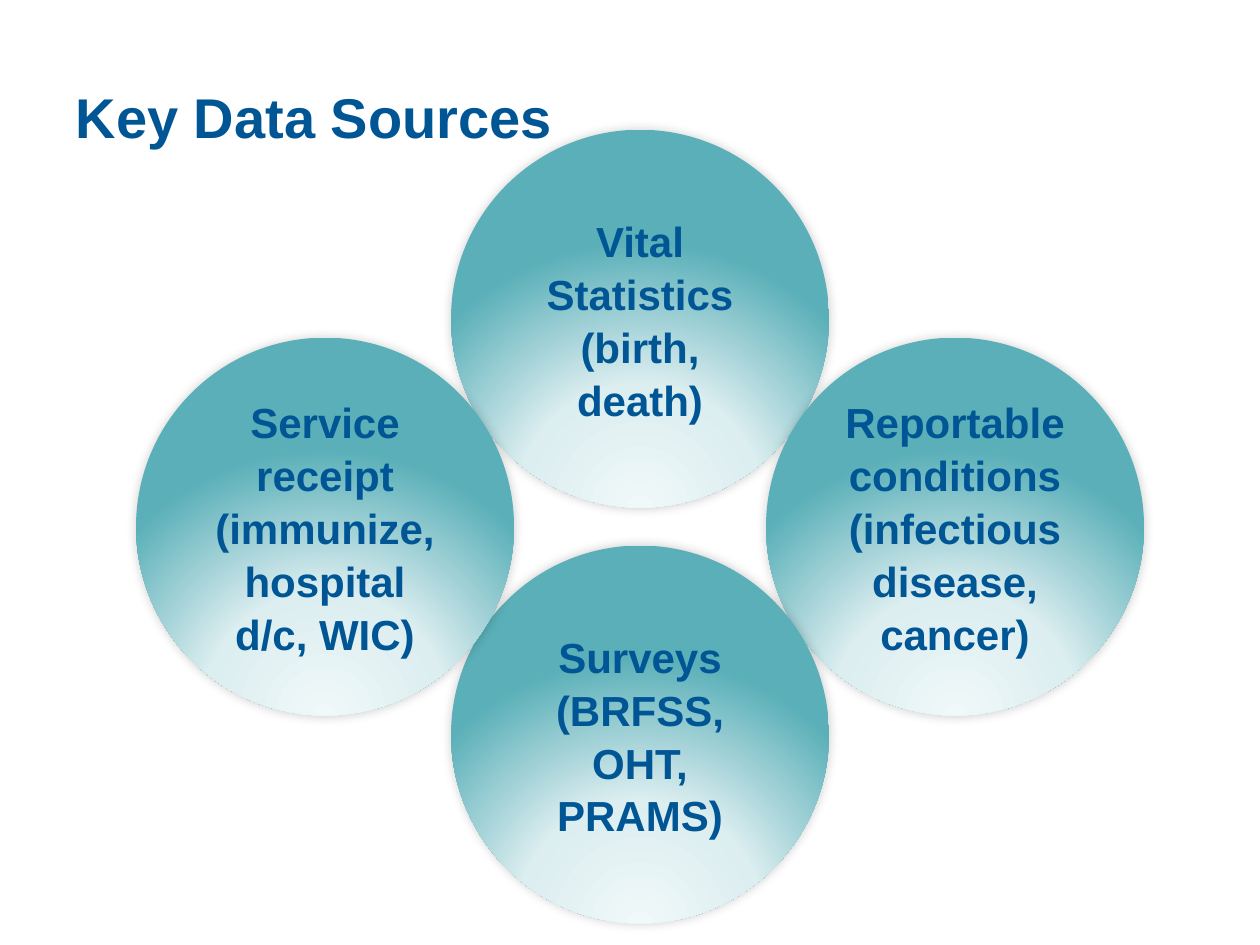
from lxml import etree
from pptx import Presentation
from pptx.dml.color import RGBColor
from pptx.enum.shapes import MSO_SHAPE as Shape
from pptx.enum.text import MSO_ANCHOR as Anchor, PP_ALIGN as Align
from pptx.oxml import parse_xml
from pptx.oxml.ns import nsdecls
from pptx.util import Inches, Pt

TITLE = "Key Data Sources"
# text, then steps right and down from the centre of the ring
SOURCES = [
    ("Vital Statistics (birth, death)", 0, -1),
    ("Reportable conditions (infectious disease, cancer)", 1, 0),
    ("Surveys (BRFSS, OHT, PRAMS)", 0, 1),
    ("Service receipt (immunize, hospital d/c, WIC)", -1, 0),
]
MID_X, MID_Y = 5.08, 4.18
STEP_X, STEP_Y = 2.5, 1.65
SIZE = 3
BLUE = "005595"
STOPS = [(0, "F0F8F9"), (46, "DCEEF0"), (100, "5AAFB8")]


def color(code):
    return RGBColor.from_string(code)


def write(frame, text, size, align):
    frame.word_wrap = True
    frame.vertical_anchor = Anchor.MIDDLE
    para = frame.paragraphs[0]
    para.alignment = align
    run = para.add_run()
    run.text = text
    look = {"name": "Arial", "size": Pt(size), "bold": True}
    for key, value in look.items():
        setattr(run.font, key, value)
    run.font.color.rgb = color(BLUE)
    return para


def glow(shape):
    """Give the shape a gradient rising from below and a soft shadow."""
    stops = "".join(
        f'<a:gs pos="{pos * 1000}"><a:srgbClr val="{code}"/></a:gs>'
        for pos, code in STOPS)
    grad = parse_xml(
        f'<a:gradFill {nsdecls("a")} rotWithShape="1"><a:gsLst>{stops}</a:gsLst>'
        '<a:path path="circle"><a:fillToRect l="50000" t="130000" '
        'r="50000" b="-30000"/></a:path></a:gradFill>')
    shape.fill.background()
    props = shape.element.spPr
    props.replace(props.find("{*}noFill"), grad)
    shape.shadow.inherit = False
    shade = etree.SubElement(props.find("{*}effectLst"), grad.tag.replace(
        "gradFill", "outerShdw"), blurRad=str(Pt(6)), dist="0",
        dir=str(225 * 60000), rotWithShape="0")
    tint = parse_xml(f'<a:srgbClr {nsdecls("a")} val="000000">'
                     '<a:alpha val="20000"/></a:srgbClr>')
    shade.append(tint)


def add_source(slide, text, right, down):
    left = MID_X + right * STEP_X - SIZE / 2
    top = MID_Y + down * STEP_Y - SIZE / 2
    disc = slide.shapes.add_shape(
        Shape.OVAL, *map(Inches, (left, top, SIZE, SIZE)))
    glow(disc)
    disc.line.fill.background()
    para = write(disc.text_frame, text, 24, Align.CENTER)
    para.line_spacing = 1.05


def main():
    deck = Presentation()
    deck.slide_width, deck.slide_height = Inches(10), Inches(7.5)
    slide = deck.slides.add_slide(deck.slide_layouts[5])
    title = slide.shapes.title
    place = {"left": 0.5, "top": 0.3, "width": 9, "height": 1.25}
    for key, value in place.items():
        setattr(title, key, Inches(value))
    write(title.text_frame, TITLE, 32, Align.LEFT)
    for source in SOURCES:
        add_source(slide, *source)
    deck.save("out.pptx")


if __name__ == "__main__":
    main()
